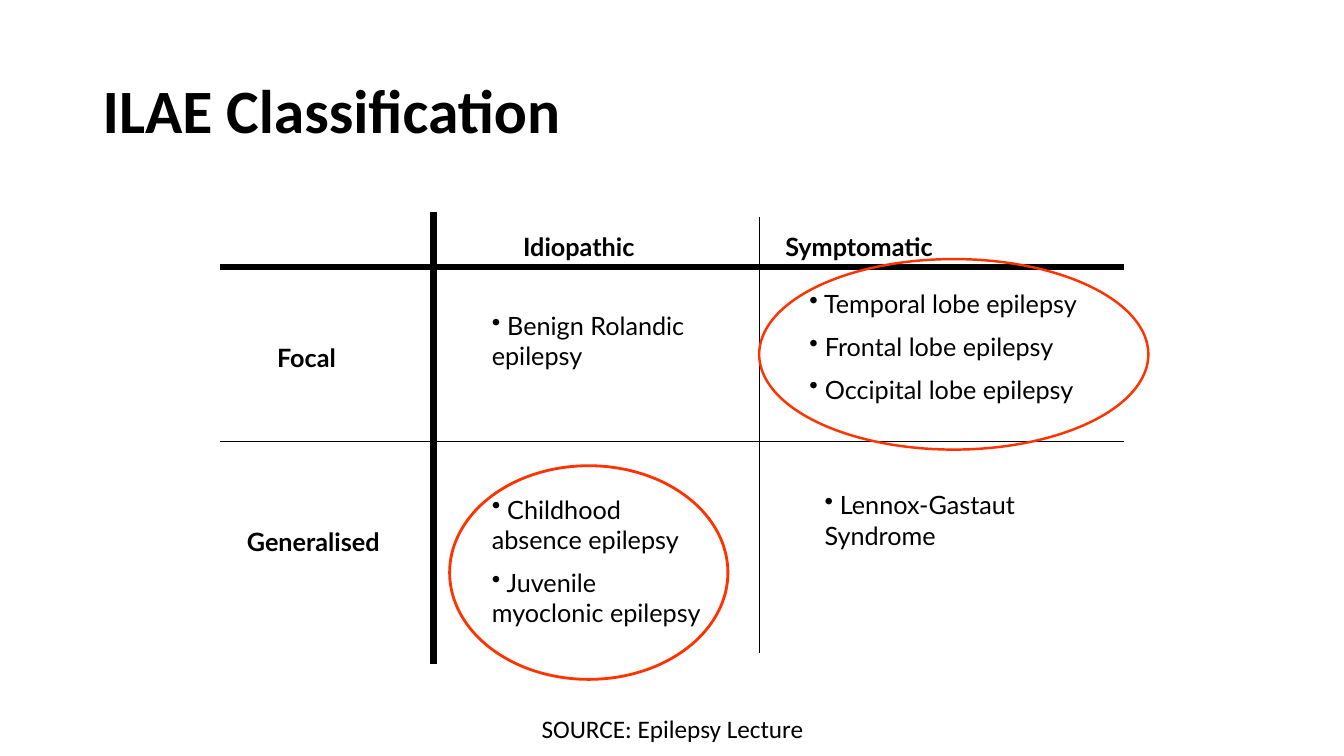
from lxml import etree
from pptx import Presentation
from pptx import util as u
from pptx.dml.color import RGBColor
from pptx.enum import shapes, text
from pptx.oxml.ns import qn

BLACK = RGBColor(0, 0, 0)
RED = RGBColor(0xFF, 0x33, 0x00)

LEFT, RIGHT = 2.18, 11.15
HEAD_Y, ROW_Y = 2.65, 4.38
SIDE_X, COL_X = 4.3, 7.53


class Page:
    body = "Lato"
    size = 18
    gap = 9

    def __init__(self, slide):
        self.shapes = slide.shapes

    def rule(self, x1, y1, x2, y2, width):
        ends = [u.Inches(n) for n in (x1, y1, x2, y2)]
        line = self.shapes.add_connector(shapes.MSO_CONNECTOR.STRAIGHT, *ends)
        line.line.color.rgb = BLACK
        line.line.width = u.Pt(width)
        etree.SubElement(line._element.spPr, qn("a:effectLst"))

    def ring(self, x, y, w, h, width):
        box = [u.Inches(n) for n in (x, y, w, h)]
        oval = self.shapes.add_shape(shapes.MSO_SHAPE.OVAL, *box)
        oval.shadow.inherit = False
        oval.fill.background()
        oval.line.color.rgb = RED
        oval.line.width = u.Pt(width)

    def text(self, x, y, w, h, lines, font=body, size=size, bold=False):
        """Add a wrapped text box with one paragraph per line."""
        frame = self.shapes.add_textbox(*[u.Inches(n) for n in (x, y, w, h)]).text_frame
        frame.word_wrap = True
        frame.text = "\n".join(lines)
        for para in frame.paragraphs:
            para.font.name = font
            para.font.size = u.Pt(size)
            para.font.bold = bold
            para.font.color.rgb = BLACK
        return frame

    def label(self, x, y, w, word):
        self.text(x, y, w, 0.4, [word], bold=True)

    def list(self, x, y, w, h, items):
        frame = self.text(x, y, w, h, [" " + item for item in items])
        for para in frame.paragraphs:
            para.space_before = u.Pt(self.gap)
            props = para._p.get_or_add_pPr()
            props.set("marL", "0")
            props.set("indent", "0")
            mark = etree.Element(qn("a:buChar"), char="•")
            props.find(qn("a:spcBef")).addnext(mark)


def main():
    deck = Presentation()
    deck.slide_width, deck.slide_height = u.Inches(13.33), u.Inches(7.5)
    page = Page(deck.slides.add_slide(deck.slide_layouts[6]))

    title = page.text(0.92, 0.4, 11.5, 1.45, ["ILAE Classification"], "Calibri", 44, True)
    title.vertical_anchor = text.MSO_ANCHOR.MIDDLE
    title.paragraphs[0].line_spacing = 0.9

    page.rule(COL_X, 2.15, COL_X, 6.48, 0.75)
    page.rule(LEFT, ROW_Y, RIGHT, ROW_Y, 0.75)
    page.rule(LEFT, HEAD_Y, RIGHT, HEAD_Y, 4.5)
    page.rule(SIDE_X, 2.1, SIDE_X, 6.59, 4.5)

    page.label(5.09, 2.25, 2.2, "Idiopathic")
    page.label(7.69, 2.25, 2.76, "Symptomatic")
    page.label(2.65, 3.35, 0.9, "Focal")
    page.label(2.35, 5.17, 1.71, "Generalised")

    page.list(4.78, 4.85, 2.28, 1.45,
              ["Childhood absence epilepsy", "Juvenile myoclonic epilepsy"])
    page.list(7.93, 2.81, 3.35, 1.3,
              [f"{lobe} lobe epilepsy" for lobe in ("Temporal", "Frontal", "Occipital")])
    page.list(4.78, 3.03, 2.6, 0.72, ["Benign Rolandic epilepsy"])
    page.list(8.08, 4.81, 2.6, 0.72, ["Lennox-Gastaut Syndrome"])

    page.ring(COL_X, 2.57, 3.86, 1.89, 1.75)
    page.ring(4.46, 4.62, 2.76, 2.12, 2)

    source = page.text(1.67, 7.03, 10, 0.4, ["SOURCE: Epilepsy Lecture"], "Calibri")
    source.paragraphs[0].alignment = text.PP_ALIGN.CENTER

    deck.save("out.pptx")


if __name__ == "__main__":
    main()
